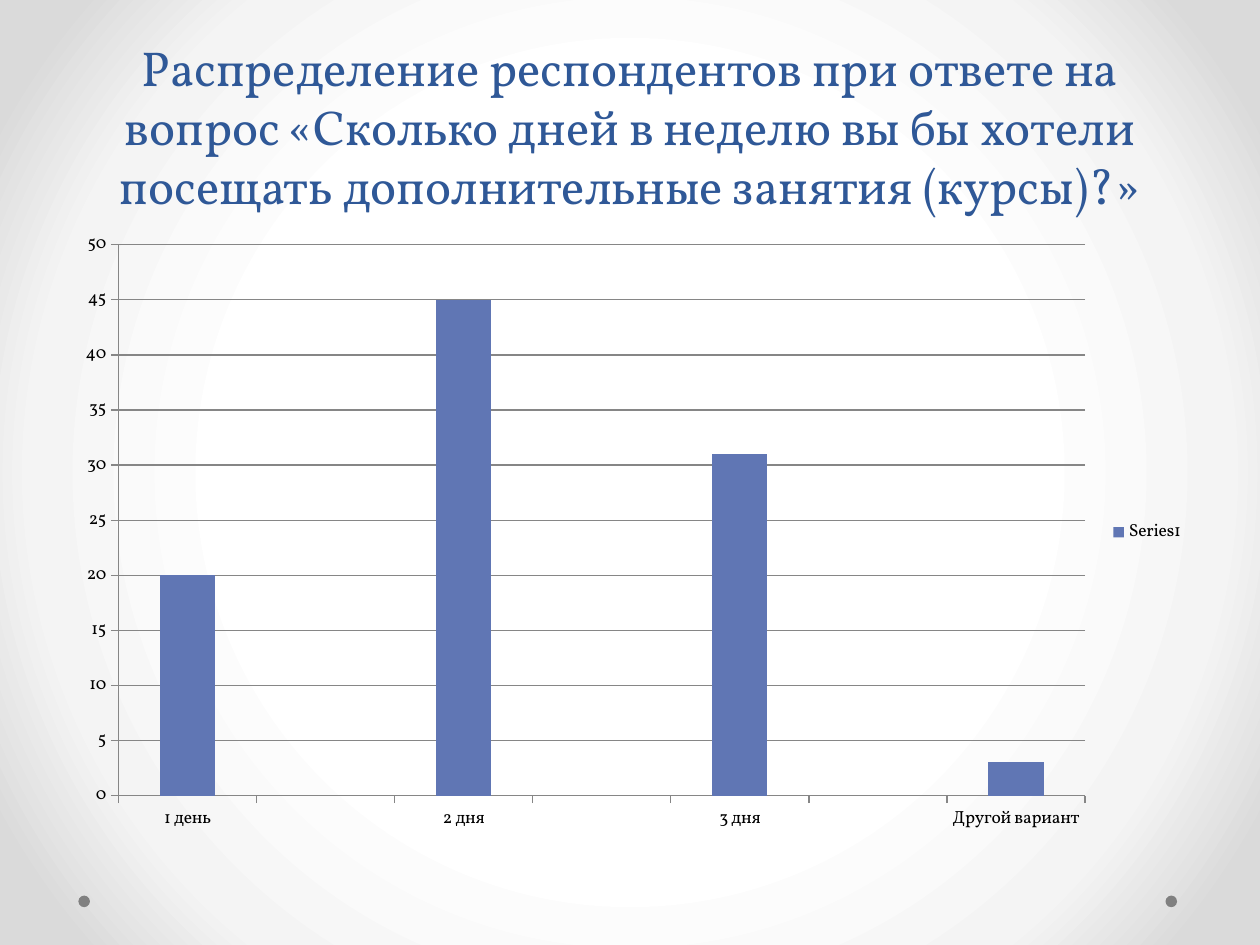
from pptx import Presentation
from pptx.chart.data import CategoryChartData
from pptx.dml.color import RGBColor
from pptx.enum.chart import XL_CHART_TYPE as ChartType, XL_LEGEND_POSITION as LegendPos, XL_TICK_MARK as Tick
from pptx.enum.shapes import MSO_SHAPE as Shape
from pptx.enum.text import MSO_ANCHOR as Anchor, PP_ALIGN as Align
from pptx.oxml import parse_xml
from pptx.oxml.ns import nsdecls, qn
from pptx.util import Pt

FONT = "Vollkorn"
TITLE = ("Распределение респондентов при ответе на вопрос «Сколько дней "
         "в неделю вы бы хотели посещать дополнительные занятия (курсы)?»")
CATEGORIES = ["1 день", "", "2 дня", "", "3 дня", "", "Другой вариант"]
VALUES = [20, None, 45, None, 31, None, 3]
BACKGROUND = [(50, "FFFFFF"), (76, "F4F4F4"), (92, "DADADA")]


def rgb(color):
    return RGBColor.from_string(color)


def set_radial_background(s, stops):
    s.background.fill.gradient()
    old = next(s._element.iter(qn("a:gradFill")))
    stops_xml = "".join(
        f'<a:gs pos="{pos * 1000}"><a:srgbClr val="{color}"/></a:gs>'
        for pos, color in stops)
    old.getparent().replace(old, parse_xml(
        f'<a:gradFill {nsdecls("a")} rotWithShape="1"><a:gsLst>{stops_xml}</a:gsLst>'
        '<a:path path="circle"><a:fillToRect l="50000" t="50000" r="50000" b="50000"/>'
        '</a:path></a:gradFill>'))


def add_dot(s, left, top, size, color):
    sp = s.shapes.add_shape(Shape.OVAL, Pt(left), Pt(top), Pt(size), Pt(size))
    sp.shadow.inherit = False
    sp.fill.solid()
    sp.fill.fore_color.rgb = rgb(color)
    sp.line.fill.background()


def add_title(s, text, left, top, width, height):
    tf = s.shapes.add_textbox(Pt(left), Pt(top), Pt(width), Pt(height)).text_frame
    tf.word_wrap = True
    tf.vertical_anchor = Anchor.BOTTOM
    p = tf.paragraphs[0]
    p.alignment = Align.CENTER
    p.line_spacing = Pt(33.6)
    r = p.add_run()
    r.text = text
    r.font.name, r.font.size = FONT, Pt(28)
    r.font.color.rgb = rgb("2F5897")


def style_axis(axis):
    axis.major_tick_mark = Tick.OUTSIDE
    axis.minor_tick_mark = Tick.NONE
    axis.format.line.color.rgb = rgb("868686")
    axis.format.line.width = Pt(0.75)


def add_column_chart(s, left, top, width, height):
    data = CategoryChartData()
    data.categories = CATEGORIES
    data.add_series("Series1", VALUES)
    chart = s.shapes.add_chart(ChartType.COLUMN_CLUSTERED, Pt(left), Pt(top),
                               Pt(width), Pt(height), data).chart
    chart.has_title = False
    chart.font.name, chart.font.size = FONT, Pt(10)
    chart.font.color.rgb = rgb("000000")
    chart.has_legend = True
    chart.legend.position = LegendPos.RIGHT
    chart.legend.include_in_layout = False

    plot = chart.plots[0]
    plot.vary_by_categories = False
    plot.gap_width = 150
    series = plot.series[0]
    series.format.fill.solid()
    series.format.fill.fore_color.rgb = rgb("6076B4")

    style_axis(chart.category_axis)
    axis = chart.value_axis
    style_axis(axis)
    axis.minimum_scale, axis.maximum_scale, axis.major_unit = 0, 50, 5
    axis.has_major_gridlines = True
    axis.major_gridlines.format.line.color.rgb = rgb("868686")
    axis.major_gridlines.format.line.width = Pt(0.75)


def main():
    prs = Presentation()
    prs.slide_width, prs.slide_height = Pt(720), Pt(540)
    s = prs.slides.add_slide(prs.slide_layouts[6])
    set_radial_background(s, BACKGROUND)
    for left in (666, 44.8):
        add_dot(s, left, 511.8, 6.6, "808080")
    add_title(s, TITLE, 36, 0, 648, 126)
    add_column_chart(s, 36, 126, 648, 356.4)
    prs.save("out.pptx")


if __name__ == "__main__":
    main()
